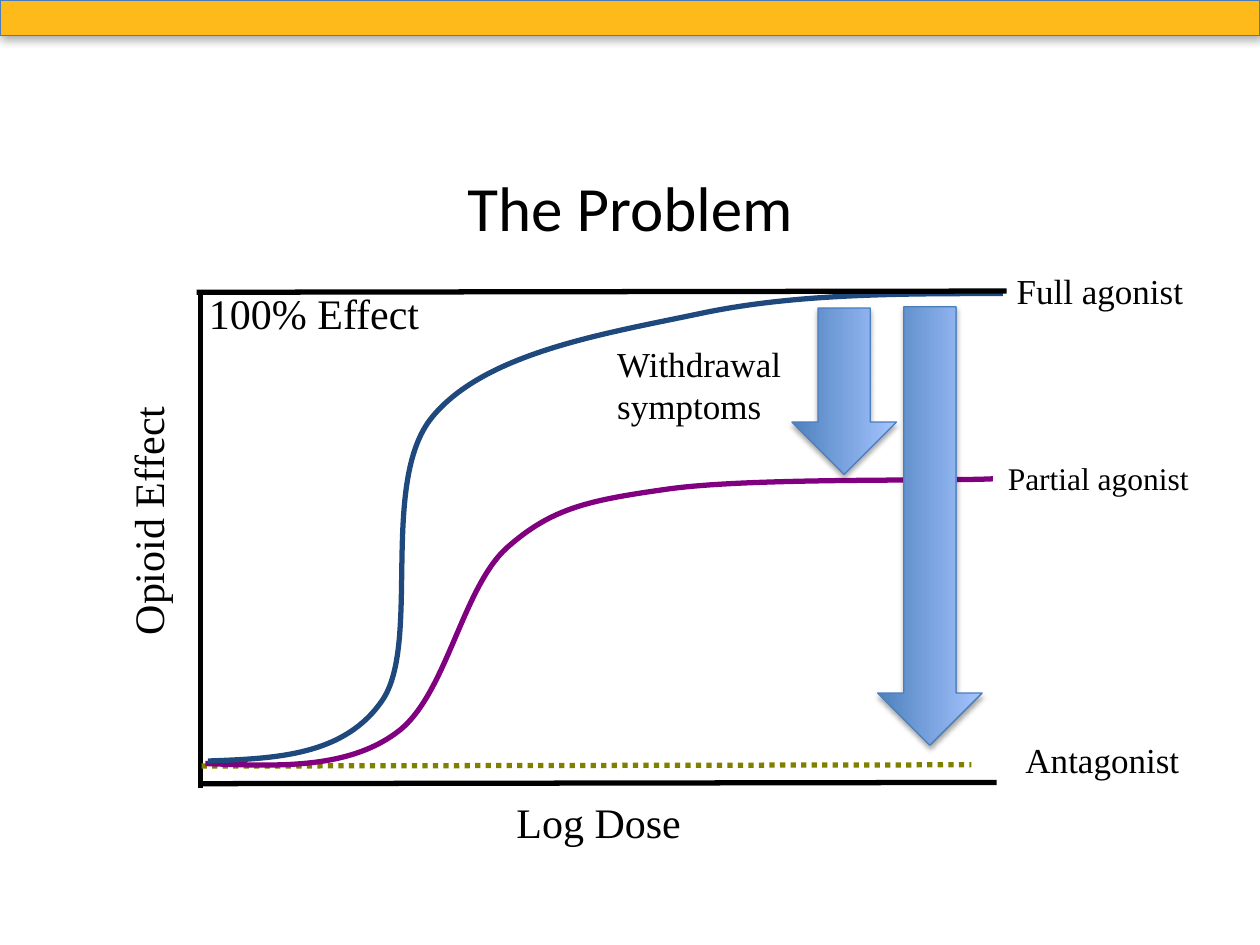
from lxml import etree
from pptx import Presentation
from pptx.dml.color import RGBColor
from pptx.enum.dml import MSO_LINE_DASH_STYLE as DASH
from pptx.enum.shapes import MSO_CONNECTOR, MSO_SHAPE
from pptx.enum.text import MSO_ANCHOR, MSO_AUTO_SIZE, PP_ALIGN
from pptx.oxml.ns import qn
from pptx.util import Inches, Pt

COLORS = {
    "black": "000000", "band": "FDBA1A", "band_edge": "4A7EBB",
    "full": "1F497D", "partial": "800080", "antagonist": "808000",
    "arrow_dark": "4F81BD", "arrow_light": "A4C4FF", "arrow_edge": "4B7EBC",
}


def rgb(name):
    return RGBColor.from_string(COLORS[name])


class DoseSlide:
    title_font = "Calibri"
    label_font = "Times New Roman"
    stroke = Pt(3)

    def __init__(self, prs):
        self.slide = prs.slides.add_slide(prs.slide_layouts[5])
        self.shapes = self.slide.shapes

    def format_run(self, p, font, size):
        for r in p.runs:
            r.font.name = font
            r.font.size = Pt(size)
            r.font.color.rgb = rgb("black")

    def title(self, text, box):
        s = self.shapes.title
        s.left, s.top, s.width, s.height = map(Inches, box)
        tf = s.text_frame
        tf.text = text
        tf.vertical_anchor = MSO_ANCHOR.MIDDLE
        tf.paragraphs[0].alignment = PP_ALIGN.CENTER
        self.format_run(tf.paragraphs[0], self.title_font, 36)

    def label(self, text, box, size, rotation=0):
        s = self.shapes.add_textbox(*map(Inches, box))
        s.rotation = rotation
        tf = s.text_frame
        tf.word_wrap = True
        tf.auto_size = MSO_AUTO_SIZE.SHAPE_TO_FIT_TEXT
        tf.text = text
        self.format_run(tf.paragraphs[0], self.label_font, size)

    def line(self, start, end, color="black", dash=None):
        s = self.shapes.add_connector(
            MSO_CONNECTOR.STRAIGHT, *map(Inches, start + end))
        s.line.color.rgb = rgb(color)
        s.line.width = self.stroke
        if dash:
            s.line.dash_style = dash
        etree.SubElement(s._element.spPr, qn("a:effectLst"))

    def curve(self, points, color):
        """Draw a start point followed by Bezier triples."""
        emu = [(Inches(x), Inches(y)) for x, y in points]
        builder = self.shapes.build_freeform(*emu[0])
        builder.add_line_segments(emu[1:], close=False)
        s = builder.convert_to_shape()
        s.shadow.inherit = False
        s.fill.background()
        s.line.color.rgb = rgb(color)
        s.line.width = self.stroke
        # Merge every three line segments into one cubic Bezier
        path = s._element.spPr.find(".//" + qn("a:path"))
        segments = path.findall(qn("a:lnTo"))
        for i in range(0, len(segments), 3):
            bezier = etree.SubElement(path, qn("a:cubicBezTo"))
            for segment in segments[i:i + 3]:
                bezier.append(segment[0])
                path.remove(segment)

    def edge_and_shadow(self, s, color, blur):
        s.line.color.rgb = rgb(color)
        s.line.width = Pt(0.75)
        s.shadow.inherit = False
        effects = s._element.spPr.find(qn("a:effectLst"))
        shadow = etree.SubElement(
            effects, qn("a:outerShdw"), blurRad=str(Pt(blur)),
            dist=str(Pt(1.8)), dir="5400000", rotWithShape="0")
        tint = etree.SubElement(shadow, qn("a:srgbClr"), val=COLORS["black"])
        etree.SubElement(tint, qn("a:alpha"), val="35000")

    def band(self, box):
        s = self.shapes.add_shape(MSO_SHAPE.RECTANGLE, *map(Inches, box))
        s.fill.solid()
        s.fill.fore_color.rgb = rgb("band")
        self.edge_and_shadow(s, "band_edge", 5)

    def down_arrow(self, box):
        s = self.shapes.add_shape(MSO_SHAPE.RIGHT_ARROW, *map(Inches, box))
        s.rotation = 90
        s.fill.gradient()
        s.fill.gradient_angle = 90
        for stop, color in zip(s.fill.gradient_stops,
                               ("arrow_dark", "arrow_light")):
            stop.color.rgb = rgb(color)
        self.edge_and_shadow(s, "arrow_edge", 3.1)


def main():
    prs = Presentation()
    prs.slide_width, prs.slide_height = Inches(10), Inches(7.5)
    dose = DoseSlide(prs)

    # Header
    dose.band((0, 0, 10, 0.28))
    dose.title("The Problem", (0.5, 1.08, 9, 1.11))

    # Axes and their names
    dose.line((1.59, 2.31), (1.59, 6.25))
    dose.line((1.59, 6.22), (7.91, 6.21))
    dose.label("Log Dose", (4, 6.27, 1.61, 0.5), 24)
    dose.label("Opioid Effect", (0.13, 3.85, 2.08, 0.5), 24, rotation=270)

    # Response lines and their names
    dose.line((1.6, 6.08), (7.71, 6.07), "antagonist", DASH.ROUND_DOT)
    dose.label("Full agonist", (7.97, 2.09, 1.62, 0.44), 20)
    dose.label("Partial agonist", (7.9, 3.59, 2.04, 0.4), 18)
    dose.label("Antagonist", (8.04, 5.81, 1.72, 0.44), 20)
    dose.curve([(1.63, 6.06),
                (2.18, 6.08), (2.74, 6.11), (3.14, 5.82),
                (3.54, 5.54), (3.66, 4.68), (4.02, 4.35),
                (4.38, 4.03), (4.67, 3.97), (5.31, 3.88),
                (5.96, 3.79), (7.45, 3.82), (7.88, 3.8)], "partial")
    dose.curve([(1.65, 6.04),
                (2.19, 6.02), (2.74, 6), (3.04, 5.55),
                (3.34, 5.09), (3.01, 3.82), (3.43, 3.31),
                (3.85, 2.8), (4.79, 2.65), (5.55, 2.49),
                (6.3, 2.33), (7.13, 2.33), (7.96, 2.33)], "full")

    # Maximum effect
    dose.label("100% Effect", (1.56, 2.23, 2.7, 0.5), 24)
    dose.line((1.56, 2.32), (7.99, 2.31))

    # Drops in effect
    dose.down_arrow((5.64, 3.76, 3.48, 0.83))
    dose.label("Withdrawal symptoms", (4.8, 2.67, 1.87, 0.77), 20)
    dose.down_arrow((6.04, 2.69, 1.32, 0.83))

    prs.save("out.pptx")


if __name__ == "__main__":
    main()
